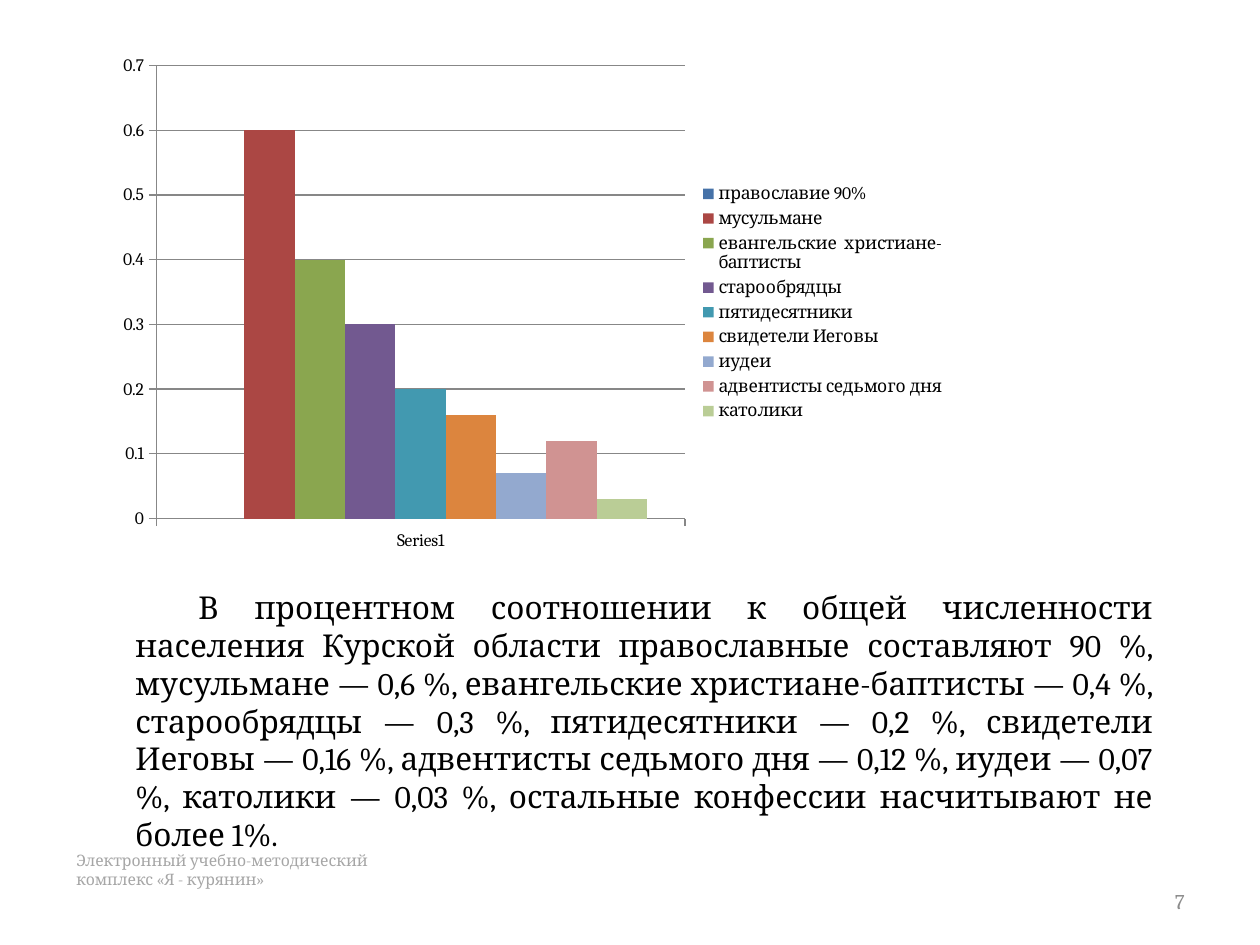
"""Build a slide with a column chart of religious groups in Kursk region and a summary."""
from lxml import etree
from pptx import Presentation
from pptx.chart.data import CategoryChartData
from pptx.dml.color import RGBColor
from pptx.enum.chart import XL_CHART_TYPE, XL_LEGEND_POSITION, XL_TICK_MARK
from pptx.enum.text import MSO_ANCHOR, PP_ALIGN
from pptx.oxml.ns import qn
from pptx.util import Pt

COLUMNS = XL_CHART_TYPE.COLUMN_CLUSTERED
LEGEND_RIGHT = XL_LEGEND_POSITION.RIGHT
TICK_CROSS = XL_TICK_MARK.CROSS
TICK_OUTSIDE = XL_TICK_MARK.OUTSIDE
TOP, MIDDLE = MSO_ANCHOR.TOP, MSO_ANCHOR.MIDDLE
LEFT, RIGHT, JUSTIFY = PP_ALIGN.LEFT, PP_ALIGN.RIGHT, PP_ALIGN.JUSTIFY

BLACK = RGBColor(0x00, 0x00, 0x00)
FOOTER_GRAY = RGBColor(0xA6, 0xA6, 0xA6)
NUMBER_GRAY = RGBColor(0x8C, 0x8C, 0x8C)
AXIS_GRAY = RGBColor(0x87, 0x87, 0x87)
FONT = "Cambria"
SCALE = 914400 / 126

GROUPS = [
    ("православие 90%", None, RGBColor(0x46, 0x72, 0xA8)),
    ("мусульмане", 0.6, RGBColor(0xAB, 0x47, 0x44)),
    ("евангельские  христиане-баптисты", 0.4, RGBColor(0x8A, 0xA6, 0x4F)),
    ("старообрядцы", 0.3, RGBColor(0x72, 0x59, 0x90)),
    ("пятидесятники", 0.2, RGBColor(0x42, 0x99, 0xB0)),
    ("свидетели Иеговы", 0.16, RGBColor(0xDC, 0x85, 0x3E)),
    ("иудеи", 0.07, RGBColor(0x93, 0xA9, 0xCF)),
    ("адвентисты седьмого дня", 0.12, RGBColor(0xD0, 0x93, 0x92)),
    ("католики", 0.03, RGBColor(0xBA, 0xCD, 0x96)),
]
SUMMARY = (
    "В процентном соотношении к общей численности населения Курской области "
    "православные составляют 90 %, мусульмане — 0,6 %, евангельские "
    "христиане-баптисты — 0,4 %, старообрядцы — 0,3 %, пятидесятники — 0,2 %, "
    "свидетели Иеговы — 0,16 %, адвентисты седьмого дня — 0,12 %, "
    "иудеи — 0,07 %, католики — 0,03 %, остальные конфессии насчитывают "
    "не более 1%."
)
FOOTER = "Электронный учебно-методический\vкомплекс «Я - курянин»"
TEXTS = [
    (FOOTER, (64, 845, 630, 50), LEFT, TOP, 0, {"size": Pt(9), "color": FOOTER_GRAY}),
    ("7", (903, 876, 294, 50), RIGHT, MIDDLE, 0, {"size": Pt(12), "color": NUMBER_GRAY}),
    (SUMMARY, (123, 582, 1042, 242), JUSTIFY, TOP, 63, {"size": Pt(18), "color": BLACK}),
]


def emu(pixels):
    return round(pixels * SCALE)


def set_font(font, size, color):
    for name, value in {"name": FONT, "size": size}.items():
        setattr(font, name, value)
    font.color.rgb = color


presentation = Presentation()
presentation.slide_width = emu(1260)
presentation.slide_height = emu(945)
slide = presentation.slides.add_slide(presentation.slide_layouts[6])

for text, box, alignment, anchor, indent, font_format in TEXTS:
    text_frame = slide.shapes.add_textbox(*map(emu, box)).text_frame
    text_frame.word_wrap = True
    text_frame.vertical_anchor = anchor
    paragraph = text_frame.paragraphs[0]
    paragraph.text = text
    paragraph.alignment = alignment
    if indent:
        paragraph._p.get_or_add_pPr().set("indent", str(emu(indent)))
    set_font(paragraph.font, **font_format)
    for run in paragraph.runs:
        set_font(run.font, **font_format)

chart_data = CategoryChartData()
chart_data.categories = ["Series1"]
for name, value, color in GROUPS:
    chart_data.add_series(name, [value])
chart_box = (105, 45, 853, 515)
chart = slide.shapes.add_chart(COLUMNS, *map(emu, chart_box), chart_data).chart
set_font(chart.font, Pt(10), BLACK)
chart.has_title = False
chart.has_legend = True
chart.legend.position = LEGEND_RIGHT
chart.legend.include_in_layout = False

plot = chart.plots[0]
plot.gap_width = 150
plot.overlap = 0
plot.vary_by_categories = False
for series, (name, value, color) in zip(plot.series, GROUPS):
    series.format.fill.solid()
    series.format.fill.fore_color.rgb = color

value_axis = chart.value_axis
value_axis.minimum_scale = 0
value_axis.maximum_scale = 0.7
value_axis.major_unit = 0.1
value_axis.has_major_gridlines = True
value_axis.tick_labels.number_format = "General"
value_axis.tick_labels.number_format_is_linked = False
value_axis.major_tick_mark = TICK_CROSS
chart.category_axis.major_tick_mark = TICK_OUTSIDE
for lined in (value_axis, value_axis.major_gridlines, chart.category_axis):
    lined.format.line.color.rgb = AXIS_GRAY
    lined.format.line.width = Pt(0.75)

plot_area = chart._chartSpace.chart.plotArea
for old_layout in plot_area.findall(qn("c:layout")):
    plot_area.remove(old_layout)
layout = etree.Element(qn("c:layout"))
manual_layout = etree.SubElement(layout, qn("c:manualLayout"))
for tag, value in {
    "layoutTarget": "inner", "xMode": "edge", "yMode": "edge",
    "x": "0.06", "y": "0.04", "w": "0.62", "h": "0.88",
}.items():
    etree.SubElement(manual_layout, qn(f"c:{tag}")).set("val", value)
plot_area.insert(0, layout)

presentation.save("out.pptx")
